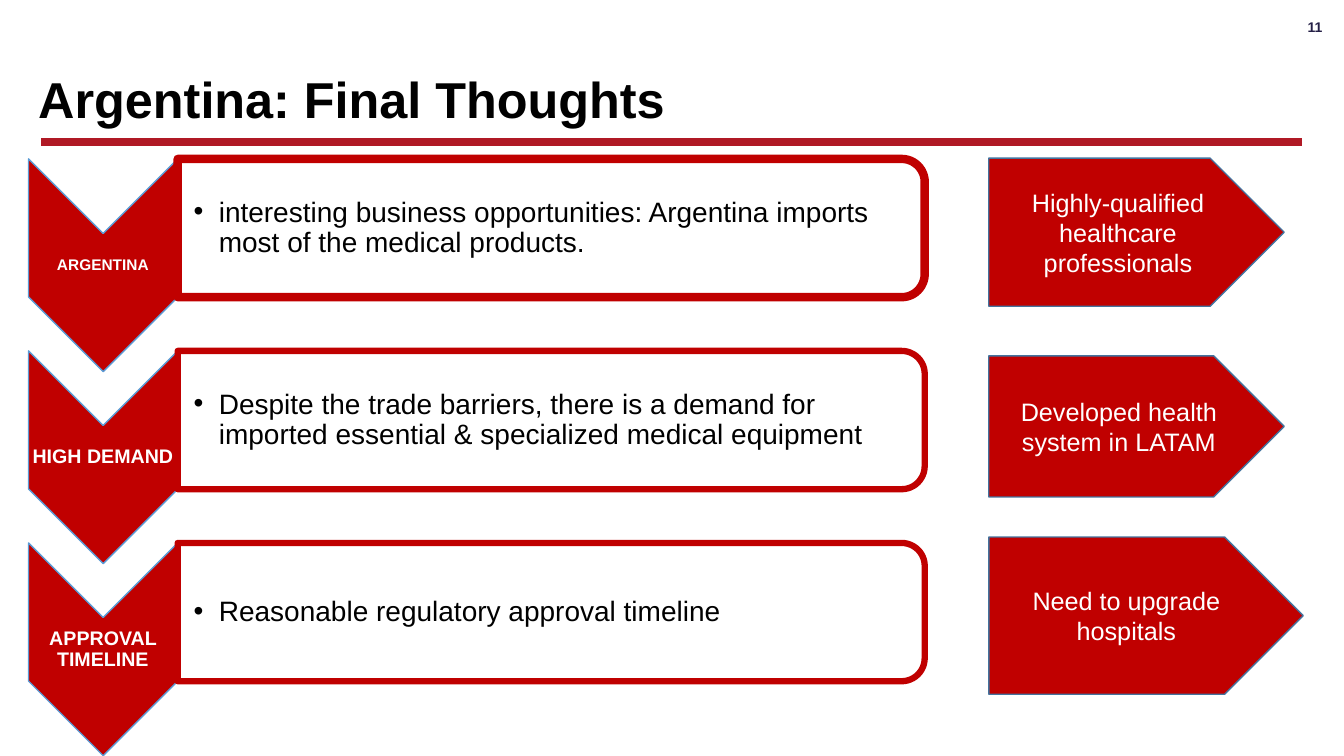
from lxml import etree
from pptx import Presentation
from pptx.dml.color import RGBColor
from pptx.enum.shapes import MSO_CONNECTOR, MSO_SHAPE
from pptx.enum.text import MSO_ANCHOR, PP_ALIGN
from pptx.oxml.ns import qn
from pptx.util import Pt

CHEVRON = MSO_SHAPE.CHEVRON
PANEL = MSO_SHAPE.ROUND_2_SAME_RECTANGLE
ARROW = MSO_SHAPE.PENTAGON
LINE = MSO_CONNECTOR.STRAIGHT
TOP, MIDDLE, BOTTOM = MSO_ANCHOR.TOP, MSO_ANCHOR.MIDDLE, MSO_ANCHOR.BOTTOM
LEFT, CENTER, RIGHT = PP_ALIGN.LEFT, PP_ALIGN.CENTER, PP_ALIGN.RIGHT

RED = RGBColor(0xC0, 0x00, 0x00)
RULE = RGBColor(0xB0, 0x19, 0x25)
BLUE = RGBColor(0x5B, 0x9B, 0xD5)
STEEL = RGBColor(0x43, 0x73, 0x9E)
NAVY = RGBColor(0x24, 0x1F, 0x46)
BLACK = RGBColor(0x00, 0x00, 0x00)
WHITE = RGBColor(0xFF, 0xFF, 0xFF)

deck = Presentation()
deck.slide_width, deck.slide_height = Pt(960), Pt(540)
slide = deck.slides.add_slide(deck.slide_layouts[6])
shapes = slide.shapes


def add_block(kind, box, fill, line, width, turn=0):
    block = shapes.add_shape(kind, *map(Pt, box))
    block.shadow.inherit = False
    block.rotation = turn
    block.fill.solid()
    block.fill.fore_color.rgb = fill
    block.line.color.rgb = line
    block.line.width = Pt(width)
    return block


def add_words(shape, words, size, color, bold=False, align=CENTER,
              anchor=MIDDLE, inset=(0.7, 0.7, 0.7, 0.7), space=0.9, bullet=False):
    frame = shape.text_frame
    frame.word_wrap = True
    frame.vertical_anchor = anchor
    frame.margin_left, frame.margin_top, frame.margin_right, frame.margin_bottom = map(Pt, inset)
    para = frame.paragraphs[0]
    para.alignment = align
    para.line_spacing = space
    if bullet:
        props = para._p.get_or_add_pPr()
        props.set("marL", str(Pt(18)))
        props.set("indent", str(-Pt(18)))
        etree.SubElement(props, qn("a:buFont")).set("typeface", "Arial")
        etree.SubElement(props, qn("a:buChar")).set("char", "•")
    run = para.add_run()
    run.text = words
    run.font.name = "Arial"
    run.font.size = Pt(size)
    run.font.bold = bold
    run.font.color.rgb = color


page = shapes.add_textbox(Pt(923), Pt(13), Pt(21.6), Pt(12.2))
add_words(page, "11", 10, NAVY, True, RIGHT, TOP, (0, 0, 0, 0), 1)

rule = shapes.add_connector(LINE, Pt(29.5), Pt(101.5), Pt(930.2), Pt(101.5))
rule.line.color.rgb = RULE
rule.line.width = Pt(6)
etree.SubElement(rule._element.spPr, qn("a:effectLst"))

title = shapes.add_textbox(Pt(20.2), Pt(46.8), Pt(910), Pt(49))
add_words(title, "Argentina: Final Thoughts", 36, BLACK, True, LEFT, BOTTOM,
          (7.2, 3.6, 7.2, 3.6))

rows = [
    ("ARGENTINA", 11, 6,
     "interesting business opportunities: Argentina imports most of the medical products."),
    ("HIGH DEMAND", 14, 4.5,
     "Despite the trade barriers, there is a demand for imported essential & "
     "specialized medical equipment"),
    ("APPROVAL TIMELINE", 14, 4.5, "Reasonable regulatory approval timeline"),
]
for i, (label, size, width, note) in enumerate(rows):
    y = 113.5 + 137.15 * i
    add_block(CHEVRON, (-2.3, y + 22.7, 152, 106.6), RED, BLUE, 1, 90)
    tag = shapes.add_textbox(Pt(20.2), Pt(y + 53.3), Pt(106.6), Pt(45.4))
    add_words(tag, label, size, WHITE, True)

    panel = add_block(PANEL, (344.3, y - 217.4, 98.8, 533.6), WHITE, RED, width, 90)
    tint = panel._element.spPr.find(qn("a:solidFill"))[0]
    etree.SubElement(tint, qn("a:alpha")).set("val", "90000")
    body = shapes.add_textbox(Pt(126.8), Pt(y + 4.8), Pt(528.5), Pt(89.2))
    add_words(body, note, 20, BLACK, align=LEFT, inset=(11.5, 0.7, 0.7, 0.7), bullet=True)

points = [
    ("Highly-qualified healthcare professionals", 113, 211, 105.8),
    ("Developed health system in LATAM", 254.2, 211, 100.8),
    ("Need to upgrade hospitals", 383.6, 224.6, 112.3),
]
for words, y, wide, high in points:
    arrow = add_block(ARROW, (706.3, y, wide, high), RED, STEEL, 1)
    add_words(arrow, words, 18, WHITE, inset=(7.2, 3.6, 7.2, 3.6), space=1)

deck.save("out.pptx")
